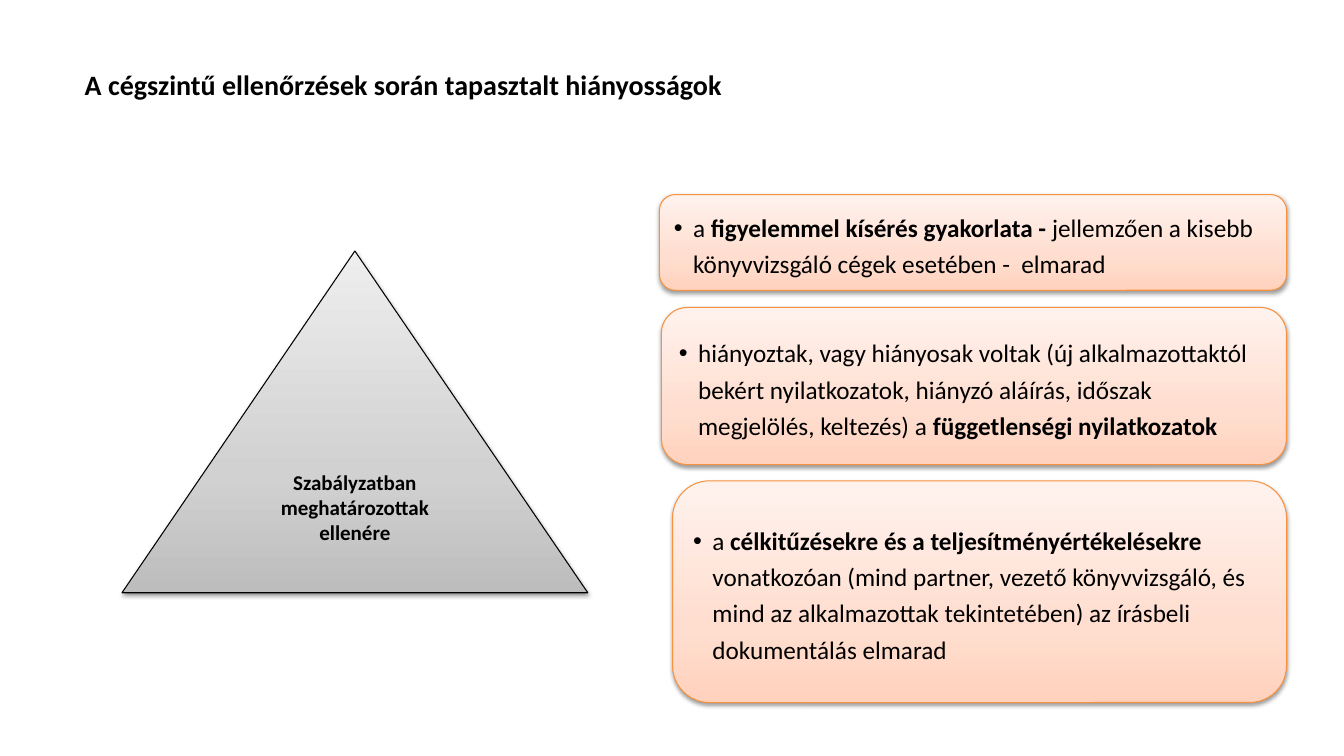
import pptx
import pptx.util
import pptx.dml.color
import pptx.enum.shapes
import pptx.enum.text
import pptx.oxml.ns
import lxml.etree

TITLE = "A cégszintű ellenőrzések során tapasztalt hiányosságok"
CAUSE = "Szabályzatban meghatározottak ellenére"
FLAWS = [
    (6.54, 1.93, 0.95, [
        ("a ", False),
        ("figyelemmel kísérés gyakorlata - ", True),
        ("jellemzően a kisebb könyvvizsgáló cégek esetében -  elmarad", False),
    ]),
    (6.56, 3.05, 1.56, [
        ("hiányoztak, vagy hiányosak voltak (új alkalmazottaktól bekért "
         "nyilatkozatok, hiányzó aláírás, időszak megjelölés, keltezés) a ", False),
        ("függetlenségi nyilatkozatok", True),
    ]),
    (6.67, 4.77, 2.2, [
        ("a", False),
        (" célkitűzésekre és a teljesítményértékelésekre ", True),
        ("vonatkozóan (mind partner, vezető könyvvizsgáló, és mind az "
         "alkalmazottak tekintetében) az írásbeli dokumentálás elmarad", False),
    ]),
]
RIGHT = 12.76
INDENT = 0.19

Inches = pptx.util.Inches
Pt = pptx.util.Pt
RGB = pptx.dml.color.RGBColor.from_string
FORM = pptx.enum.shapes.MSO_SHAPE
ALIGN = pptx.enum.text.PP_ALIGN
MIDDLE = pptx.enum.text.MSO_ANCHOR.MIDDLE

THEME = {
    "font": "Calibri",
    "ink": "000000",
    "title": 20,
    "cause": 15,
    "flaw": 18,
    "gray": ("BDBDBD", "D1D1D1", "EEEEEE"),
    "peach": ("FFD2BD", "FFDED0", "FFF2ED"),
    "edge": "F69240",
    "stops": (0, 35, 100),
}


def assign(item, values):
    for name, value in values.items():
        setattr(item, name, value)


def node(parent, tag, **attrs):
    return lxml.etree.SubElement(parent, pptx.oxml.ns.qn(tag), attrs)


def write(para, parts, size):
    for text, bold in parts:
        run = para.add_run()
        run.text = text
        assign(run.font, {"name": THEME["font"], "size": Pt(THEME[size]), "bold": bold})
        run.font.color.rgb = RGB(THEME["ink"])


def shade(shape, tones):
    shape.fill.gradient()
    grad = shape._element.spPr.find(pptx.oxml.ns.qn("a:gradFill"))
    for child in list(grad):
        grad.remove(child)
    stops = node(grad, "a:gsLst")
    for place, tone in zip(THEME["stops"], tones):
        stop = node(stops, "a:gs", pos=str(place * 1000))
        node(stop, "a:srgbClr", val=tone)
    node(grad, "a:lin", ang=str(270 * 60000), scaled="0")


def drop(shape):
    shape.shadow.inherit = False
    effects = shape._element.spPr.find(pptx.oxml.ns.qn("a:effectLst"))
    outer = node(effects, "a:outerShdw", blurRad=str(Pt(3.1)), dist=str(Pt(1.6)),
                 dir=str(90 * 60000), rotWithShape="0")
    color = node(outer, "a:srgbClr", val=THEME["ink"])
    node(color, "a:alpha", val="38000")


def panel(slide, form, box, tones, edge):
    shape = slide.shapes.add_shape(form, *map(Inches, box))
    shade(shape, tones)
    shape.line.color.rgb = RGB(edge)
    shape.line.width = Pt(0.75)
    drop(shape)
    assign(shape.text_frame, {"word_wrap": True, "vertical_anchor": MIDDLE})
    return shape.text_frame.paragraphs[0]


def bullet(para):
    assign(para, {"alignment": ALIGN.LEFT, "line_spacing": 1.2})
    props = para._p.get_or_add_pPr()
    props.set("marL", str(Inches(INDENT)))
    props.set("indent", str(-Inches(INDENT)))
    node(props, "a:buFont", typeface="Arial")
    node(props, "a:buChar", char="•")


def main():
    deck = pptx.Presentation()
    assign(deck, {"slide_width": Inches(13.33), "slide_height": Inches(7.5)})
    slide = deck.slides.add_slide(deck.slide_layouts[5])

    title = slide.shapes.title
    assign(title, {"left": Inches(0.74), "top": Inches(0.48),
                   "width": Inches(11.64), "height": Inches(0.71)})
    assign(title.text_frame, {"word_wrap": True, "vertical_anchor": MIDDLE})
    head = title.text_frame.paragraphs[0]
    head.alignment = ALIGN.LEFT
    write(head, [(TITLE, True)], "title")

    cause = panel(slide, FORM.ISOSCELES_TRIANGLE, (1.21, 2.49, 4.62, 3.39),
                  THEME["gray"], THEME["ink"])
    cause.alignment = ALIGN.CENTER
    write(cause, [(CAUSE, True)], "cause")

    for left, top, height, parts in FLAWS:
        flaw = panel(slide, FORM.ROUNDED_RECTANGLE, (left, top, RIGHT - left, height),
                     THEME["peach"], THEME["edge"])
        bullet(flaw)
        write(flaw, parts, "flaw")

    deck.save("out.pptx")


if __name__ == "__main__":
    main()
